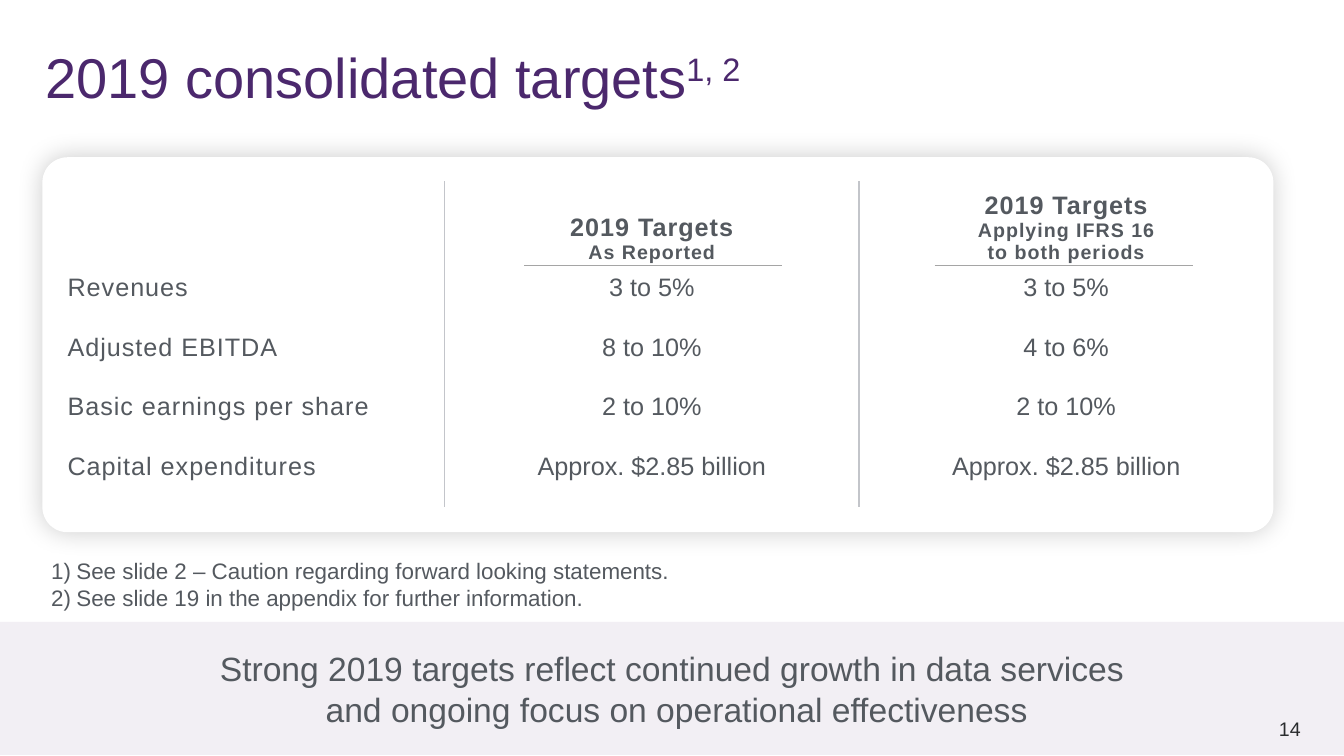
from dataclasses import dataclass

from lxml import etree
from pptx import Presentation
from pptx.dml.color import RGBColor
from pptx.enum.shapes import MSO_CONNECTOR, MSO_SHAPE
from pptx.enum.text import MSO_ANCHOR, MSO_AUTO_SIZE, PP_ALIGN
from pptx.oxml import parse_xml
from pptx.oxml.ns import nsdecls, qn
from pptx.util import Inches, Pt


@dataclass(frozen=True)
class Theme:
    font: str = "Arial"
    purple: str = "4B286D"
    gray: str = "54595F"
    dark: str = "2A2C2E"
    band: str = "F2EFF4"
    white: str = "FFFFFF"
    divider: str = "C3C5CA"
    rule: str = "A5A5A5"
    title: int = 40
    message: int = 24
    body: int = 18
    note: int = 16
    small: int = 14


T = Theme()
NO_STYLE = "{2D5ABB26-0587-4C30-8999-92F81FD0307C}"


def add_run(p, text, size=T.body, color=T.gray, bold=False,
            align=PP_ALIGN.LEFT, spacing=0, baseline=0):
    """Append a formatted run; spacing is in points, baseline in percent."""
    p.alignment = align
    r = p.add_run()
    r.text = text
    r.font.name, r.font.size, r.font.bold = T.font, Pt(size), bold
    r.font.color.rgb = RGBColor.from_string(color)
    rPr = r.font._element
    if spacing:
        rPr.set("spc", str(round(spacing * 100)))
    if baseline:
        rPr.set("baseline", str(baseline * 1000))


def add_lines(tf, lines, **fmt):
    """Write each line as a paragraph of its own and return the paragraphs."""
    tf.word_wrap = True
    for i, line in enumerate(lines):
        add_run(tf.add_paragraph() if i else tf.paragraphs[0], line, **fmt)
    return tf.paragraphs


prs = Presentation()
prs.slide_width, prs.slide_height = Inches(13.33), Inches(7.5)
s = prs.slides.add_slide(prs.slide_layouts[5])

# Message band and card
band = s.shapes.add_shape(MSO_SHAPE.RECTANGLE, 0, Inches(6.17), prs.slide_width, Inches(1.32))
card = s.shapes.add_shape(MSO_SHAPE.ROUNDED_RECTANGLE,
                          Inches(0.42), Inches(1.56), Inches(12.21), Inches(3.72))
card.adjustments[0] = 0.067
for sp, color in ((band, T.band), (card, T.white)):
    sp.shadow.inherit = False
    sp.fill.solid()
    sp.fill.fore_color.rgb = RGBColor.from_string(color)
    sp.line.fill.background()
card._element.spPr.find(qn("a:effectLst")).append(parse_xml(
    f'<a:outerShdw {nsdecls("a")} blurRad="{Pt(18)}" dist="0" dir="0" algn="ctr" rotWithShape="0">'
    '<a:srgbClr val="000000"><a:alpha val="20000"/></a:srgbClr></a:outerShdw>'))
band.text_frame.vertical_anchor = MSO_ANCHOR.MIDDLE
add_lines(band.text_frame,
          ["Strong 2019 targets reflect continued growth in data services",
           " and ongoing focus on operational effectiveness"],
          size=T.message, align=PP_ALIGN.CENTER)

# Title
title = s.shapes.title
title.left, title.top, title.width, title.height = map(Inches, (0.35, 0.37, 8.66, 0.77))
tf = title.text_frame
tf.vertical_anchor = MSO_ANCHOR.TOP
tf.auto_size = MSO_AUTO_SIZE.NONE
p, = add_lines(tf, ["2019 consolidated targets"], size=T.title, color=T.purple)
add_run(p, "1, 2", size=T.title, color=T.purple, baseline=30)

# Footnotes
notes = s.shapes.add_textbox(Inches(0.41), Inches(5.48), Inches(10.88), Inches(0.64))
for p in add_lines(notes.text_frame,
                   ["See slide 2 – Caution regarding forward looking statements.",
                    "See slide 19 in the appendix for further information."], size=T.note):
    pPr = p._p.get_or_add_pPr()
    pPr.set("marL", str(Inches(0.25)))
    pPr.set("indent", str(-Inches(0.25)))
    etree.SubElement(pPr, qn("a:buAutoNum"), type="arabicParenR")

# Targets table
headers = [[], ["2019 Targets", "As Reported"],
           ["2019 Targets", "Applying IFRS 16", "to both periods"]]
targets = [("Revenues", "3 to 5%", "3 to 5%"),
           ("Adjusted EBITDA", "8 to 10%", "4 to 6%"),
           ("Basic earnings per share", "2 to 10%", "2 to 10%"),
           ("Capital expenditures", "Approx. $2.85 billion", "Approx. $2.85 billion")]
table = s.shapes.add_table(len(targets) + 1, len(headers), Inches(0.57), Inches(1.8),
                           Inches(12.06), Inches(3.22)).table
table.first_row = table.horz_banding = False
table._tbl.tblPr.find(qn("a:tableStyleId")).text = NO_STYLE
for col, width in zip(table.columns, (3.84, 4.11, 4.11)):
    col.width = Inches(width)
for i, row in enumerate(table.rows):
    row.height = Inches(0.59 if i else 0.86)

for c, lines in enumerate(headers):
    cell = table.cell(0, c)
    cell.vertical_anchor = MSO_ANCHOR.BOTTOM
    if lines:
        add_lines(cell.text_frame, lines[:1], bold=True, spacing=0.7, align=PP_ALIGN.CENTER)
    for line in lines[1:]:
        add_run(cell.text_frame.add_paragraph(), line, size=T.small, bold=True,
                spacing=0.7, align=PP_ALIGN.CENTER)
for r, values in enumerate(targets, 1):
    for c, value in enumerate(values):
        add_lines(table.cell(r, c).text_frame, [value], spacing=0 if c else 0.7,
                  align=PP_ALIGN.CENTER if c else PP_ALIGN.LEFT)

last = len(headers) - 1
for row in table.rows:
    for c, cell in enumerate(row.cells):
        cell.fill.background()
        sides = (["lnL"] if c > 0 else []) + (["lnR"] if c < last else [])
        for i, side in enumerate(sides):
            cell._tc.get_or_add_tcPr().insert(i, parse_xml(
                f'<a:{side} {nsdecls("a")} w="{Pt(1)}"><a:solidFill>'
                f'<a:srgbClr val="{T.divider}"/></a:solidFill></a:{side}>'))

# Page number
page = s.shapes.add_textbox(Inches(12.23), Inches(6.95), Inches(0.77), Inches(0.55))
page.text_frame.vertical_anchor = MSO_ANCHOR.MIDDLE
add_lines(page.text_frame, ["14"], size=T.small, color=T.dark, align=PP_ALIGN.RIGHT)

# Rules under the column headings
for x in (5.2, 9.27):
    rule = s.shapes.add_connector(MSO_CONNECTOR.STRAIGHT, Inches(x), Inches(2.63),
                                  Inches(x + 2.56), Inches(2.63))
    rule.line.color.rgb = RGBColor.from_string(T.rule)
    rule.line.width = Pt(0.5)
    etree.SubElement(rule._element.spPr, qn("a:effectLst"))

prs.save("out.pptx")
